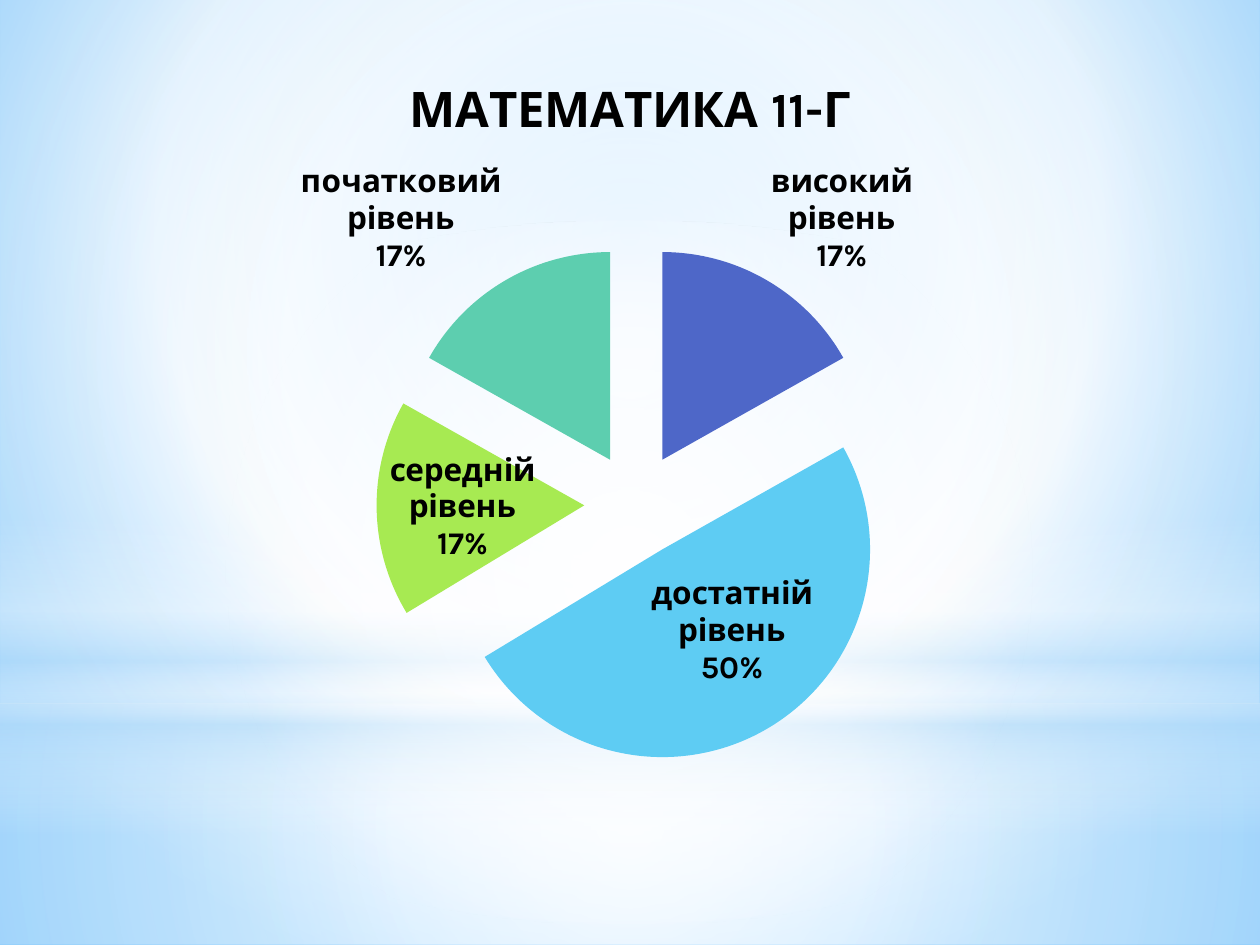
from dataclasses import dataclass

import pptx
import pptx.chart.data
import pptx.dml.color
import pptx.enum.chart
import pptx.enum.shapes
import pptx.oxml
import pptx.oxml.ns
import pptx.util
from lxml import etree

Pt = pptx.util.Pt
qn = pptx.oxml.ns.qn
WIDTH, HEIGHT = 720, 540
CENTRE = (50, 50, 50, 50)


@dataclass(frozen=True)
class Theme:
    font: str = "Karla"
    text: str = "000000"
    white: str = "FFFFFF"
    haze: str = "B4DCFA"
    sky: str = "9ED5FF"
    deep_sky: str = "5BB9FF"
    slices: tuple = ("4E67C8", "5ECCF3", "A7EA52", "5DCEAF")
    base_size: int = 10
    label_size: int = 18
    title_size: int = 28


THEME = Theme()


def set_gradient(fill, element, stops, focus=None, angle=90):
    """Fill with (position, colour, opacity) stops, round a focus rectangle or along an angle."""
    fill.gradient()
    gradient = element.find(".//" + qn("a:gradFill"))
    for child in list(gradient):
        gradient.remove(child)
    stop_list = etree.SubElement(gradient, qn("a:gsLst"))
    for position, colour, opacity in stops:
        stop = etree.SubElement(stop_list, qn("a:gs"), pos=str(position * 1000))
        value = etree.SubElement(stop, qn("a:srgbClr"), val=colour)
        if opacity < 100:
            etree.SubElement(value, qn("a:alpha"), val=str(opacity * 1000))
    if focus:
        circle = etree.SubElement(gradient, qn("a:path"), path="circle")
        sides = {side: str(inset * 1000) for side, inset in zip("ltrb", focus)}
        etree.SubElement(circle, qn("a:fillToRect"), **sides)
    else:
        etree.SubElement(gradient, qn("a:lin"), ang=str(angle * 60000), scaled="0")


def add_glow(slide, kind, top, height, stops, focus=None):
    """Add a full-width translucent gradient shape."""
    shape = slide.shapes.add_shape(kind, Pt(0), Pt(top), Pt(WIDTH), Pt(height))
    shape.shadow.inherit = False
    shape.line.fill.background()
    set_gradient(shape.fill, shape.element, stops, focus)


def add_backdrop(slide):
    white, haze = THEME.white, THEME.haze
    rectangle = pptx.enum.shapes.MSO_SHAPE.RECTANGLE
    oval = pptx.enum.shapes.MSO_SHAPE.OVAL
    horizon = 401.8
    set_gradient(slide.background.fill, slide.element,
                 [(0, THEME.sky, 100), (60, white, 100), (100, THEME.deep_sky, 100)],
                 (20, 10, 20, 60))
    add_glow(slide, rectangle, horizon, HEIGHT - horizon,
             [(0, white, 91), (37, white, 76), (100, haze, 79)], CENTRE)
    add_glow(slide, rectangle, 0, horizon,
             [(0, white, 89), (48, white, 62), (100, haze, 79)], CENTRE)
    add_glow(slide, rectangle, 296.6, 180,
             [(0, white, 0), (29, white, 30), (45, haze, 40),
              (55, white, 26), (65, haze, 60), (100, white, 0)])
    add_glow(slide, oval, 126, horizon, [(0, white, 100), (56, white, 0)], CENTRE)


def style_font(font, size, bold):
    font.name = THEME.font
    font.size = Pt(size)
    font.bold = bold
    font.color.rgb = pptx.dml.color.RGBColor.from_string(THEME.text)


def set_plot_layout(chart, x, y, w, h):
    """Place the inner plot area, in fractions of the chart."""
    plot_area = chart.element.find(".//" + qn("c:plotArea"))
    for old in plot_area.findall(qn("c:layout")):
        plot_area.remove(old)
    layout = etree.Element(qn("c:layout"))
    plot_area.insert(0, layout)
    manual = etree.SubElement(layout, qn("c:manualLayout"))
    settings = {"layoutTarget": "inner", "xMode": "edge", "yMode": "edge",
                "x": x, "y": y, "w": w, "h": h}
    for name, value in settings.items():
        etree.SubElement(manual, qn("c:" + name), val=str(value))


def style_labels(series):
    labels = series.data_labels
    labels.show_value = False
    labels.show_percentage = True
    labels.show_category_name = True
    labels.position = pptx.enum.chart.XL_LABEL_POSITION.BEST_FIT
    style_font(labels.font, THEME.label_size, True)
    separator = etree.Element(qn("c:separator"))
    separator.text = "\n"
    element = series.format.element if hasattr(series.format, "element") else series._element
    element.find(".//" + qn("c:showBubbleSize")).addnext(separator)


def explode_slices(series, percent):
    explosion = etree.Element(qn("c:explosion"), val=str(percent))
    series._element.find(qn("c:dPt")).addprevious(explosion)


def add_level_pie(slide):
    data = pptx.chart.data.CategoryChartData()
    data.categories = ["високий рівень", "достатній рівень",
                       "середній рівень", "початковий рівень"]
    data.add_series("Series 1", (17, 50, 17, 17))
    chart = slide.shapes.add_chart(pptx.enum.chart.XL_CHART_TYPE.PIE, Pt(36.7), Pt(25.9),
                                   Pt(647.3), Pt(456.5), data).chart
    style_font(chart.font, THEME.base_size, False)
    chart.has_legend = False
    chart.has_title = True
    title = chart.chart_title.text_frame
    title.text = "МАТЕМАТИКА 11-Г"
    style_font(title.paragraphs[0].runs[0].font, THEME.title_size, True)
    set_plot_layout(chart, 0.1, 0.25, 0.81, 0.65)

    plot = chart.plots[0]
    plot.vary_by_categories = True
    series = plot.series[0]
    for index, colour in enumerate(THEME.slices):
        fill = series.points[index].format.fill
        fill.solid()
        fill.fore_color.rgb = pptx.dml.color.RGBColor.from_string(colour)
    explode_slices(series, 25)
    style_labels(series)


def main():
    presentation = pptx.Presentation()
    presentation.slide_width, presentation.slide_height = Pt(WIDTH), Pt(HEIGHT)
    slide = presentation.slides.add_slide(presentation.slide_layouts[6])
    add_backdrop(slide)
    add_level_pie(slide)
    presentation.save("out.pptx")


if __name__ == "__main__":
    main()
